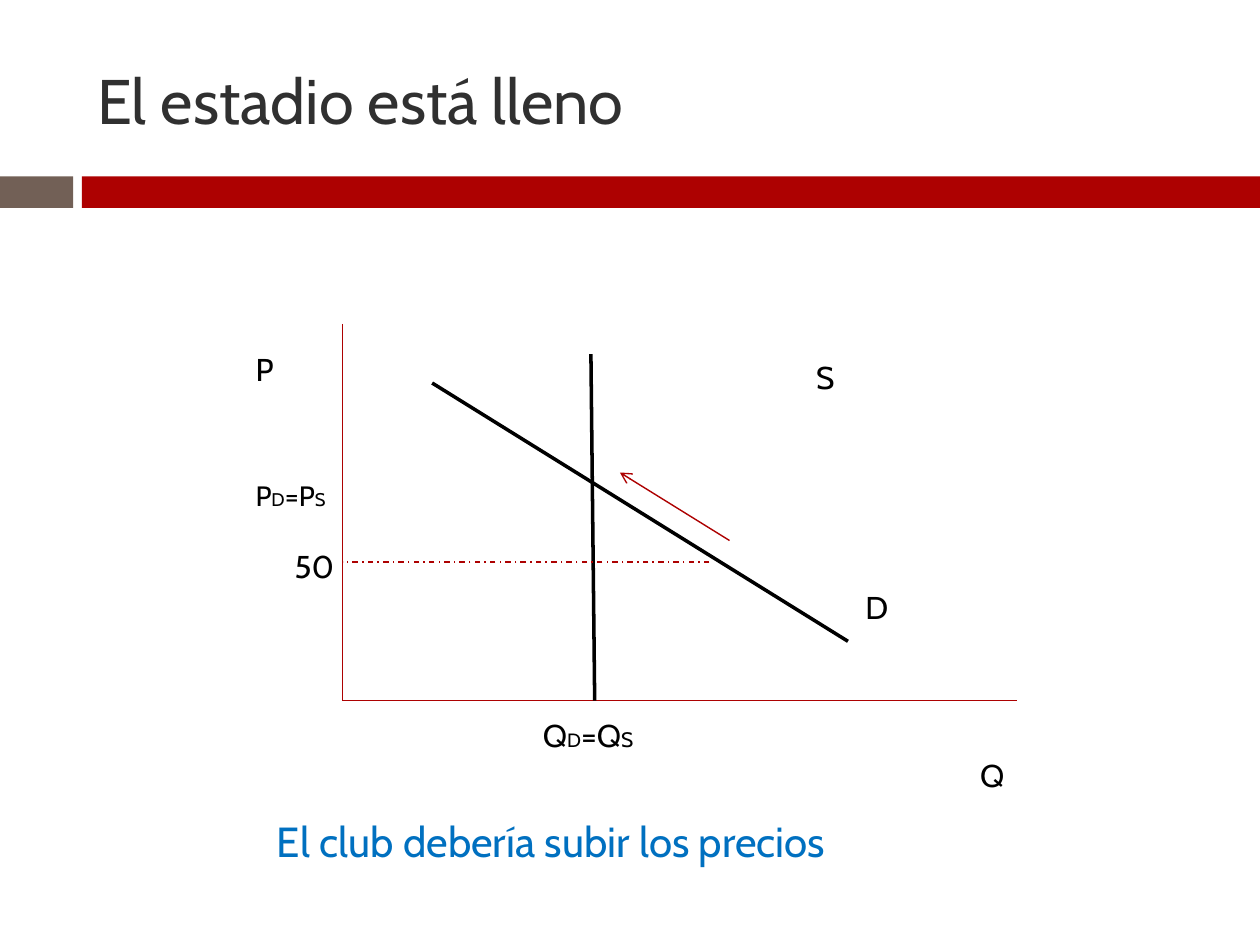
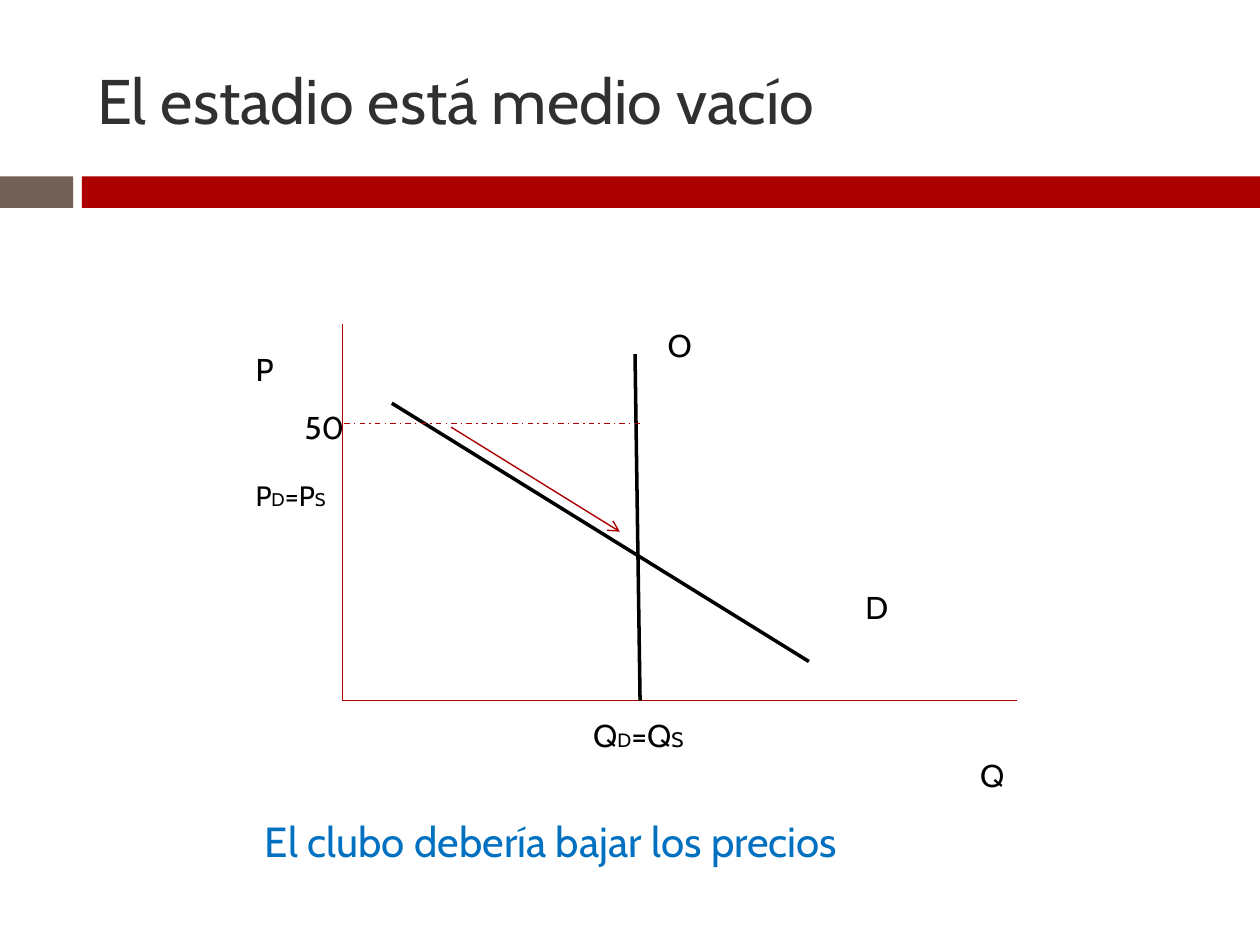
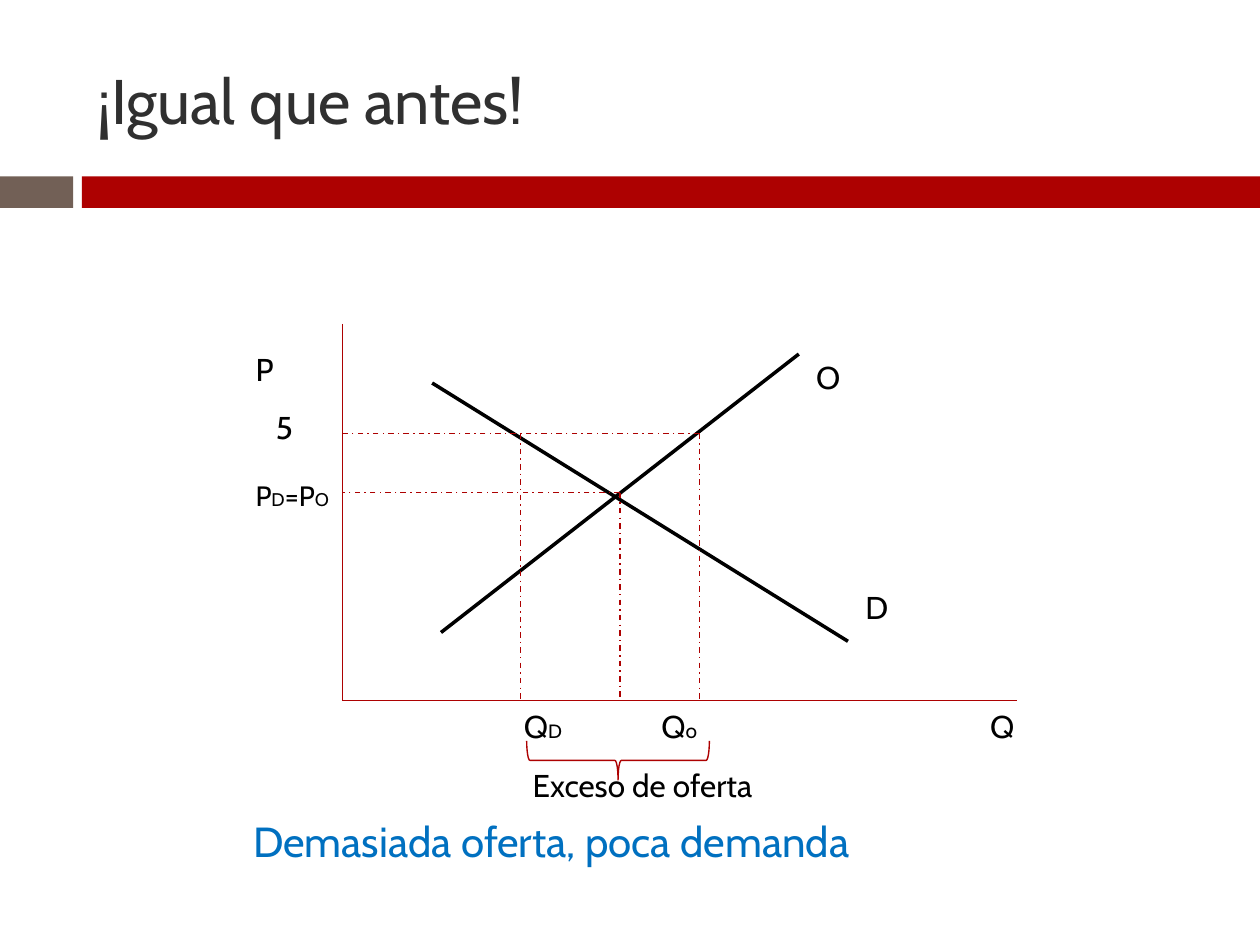
from dataclasses import dataclass

from lxml.etree import SubElement
from pptx import Presentation
from pptx.dml.color import RGBColor
from pptx.enum.dml import MSO_LINE
from pptx.enum.shapes import MSO_CONNECTOR, MSO_SHAPE
from pptx.enum.text import MSO_ANCHOR, MSO_AUTO_SIZE, PP_ALIGN
from pptx.oxml.ns import qn
from pptx.util import Emu, Pt

SCALE = 9144  # EMU in one px, at 100 px to the inch
AXIS_X, AXIS_Y = 272, 556  # where the two axes meet


@dataclass(frozen=True)
class Theme:
    font: str = "Cabin"
    title_color: str = "303030"
    text_color: str = "000000"
    caption_color: str = "0070C0"
    accent: str = "AD0101"
    stone: str = "726056"
    title_size: float = 36
    caption_size: float = 24
    label_size: float = 18
    price_sizes: tuple = (16, 10.5, 16, 10.5)
    quantity_sizes: tuple = (18, 11, 18, 12)
    thin: float = 0.79
    thick: float = 2


def px(length):
    return Emu(length * SCALE)


def rgb(color):
    return RGBColor.from_string(color)


def write_text(frame, text, *, font, sizes, color, align=PP_ALIGN.LEFT, tab=None):
    """Write one paragraph; "|" parts the text into spans, one size each."""
    para = frame.paragraphs[0]
    para.alignment = align
    if tab:
        tabs = SubElement(para._p.get_or_add_pPr(), qn("a:tabLst"))
        SubElement(tabs, qn("a:tab"), pos=str(px(tab)), algn="l")
    for words, size in zip(text.split("|"), sizes):
        span = para.add_run()
        span.text = words
        span.font.name = font
        span.font.size = Pt(size)
        span.font.color.rgb = rgb(color)


class SlideBuilder:
    def __init__(self, deck, theme):
        self.deck = deck
        self.theme = theme
        self.page = None

    # Page frame
    def start(self, title):
        self.page = self.deck.slides.add_slide(self.deck.slide_layouts[5])
        self.band(0, 58, self.theme.stone)
        self.band(65, 935, self.theme.accent)
        box = self.page.shapes.title
        box.left, box.top, box.width, box.height = map(px, (67, 25, 892, 108))
        box.text_frame.vertical_anchor = MSO_ANCHOR.MIDDLE
        box.text_frame.auto_size = MSO_AUTO_SIZE.NONE
        write_text(box.text_frame, title, font=self.theme.font,
                   sizes=(self.theme.title_size,), color=self.theme.title_color)

    def band(self, left, width, color):
        bar = self.page.shapes.add_shape(
            MSO_SHAPE.RECTANGLE, px(left), px(140), px(width), px(25))
        bar.shadow.inherit = False
        bar.fill.solid()
        bar.fill.fore_color.rgb = rgb(color)
        bar.line.fill.background()

    # Text
    def label(self, text, left, top, width, *, height=40, sizes=None, color=None,
              wrap=True, **layout):
        box = self.page.shapes.add_textbox(px(left), px(top), px(width), px(height))
        box.text_frame.word_wrap = wrap
        box.text_frame.auto_size = MSO_AUTO_SIZE.SHAPE_TO_FIT_TEXT
        write_text(box.text_frame, text, font=self.theme.font,
                   sizes=sizes or (self.theme.label_size,),
                   color=color or self.theme.text_color, **layout)

    def caption(self, text):
        self.label(text, 91, 642, 693, height=50, sizes=(self.theme.caption_size,),
                   color=self.theme.caption_color, align=PP_ALIGN.CENTER)

    def price(self, text):
        self.label(text, 193, 375, 87, height=37, sizes=self.theme.price_sizes)

    def quantity(self, text, left, top=563, width=110, **layout):
        self.label(text, left, top, width, sizes=self.theme.quantity_sizes, **layout)

    # Lines
    def line(self, start, end, *, color=None, width=None, dashed=False, arrow=False):
        line = self.page.shapes.add_connector(
            MSO_CONNECTOR.STRAIGHT, *map(px, start + end))
        line.line.color.rgb = rgb(color or self.theme.accent)
        line.line.width = Pt(width or self.theme.thin)
        if dashed:
            line.line.dash_style = MSO_LINE.DASH_DOT
        if arrow:
            SubElement(line.line._get_or_add_ln(), qn("a:tailEnd"), type="arrow")
        SubElement(line._element.spPr, qn("a:effectLst"))

    def curve(self, start, end):
        self.line(start, end, color=self.theme.text_color, width=self.theme.thick)

    def price_guide(self, x, y):
        self.line((x, y), (AXIS_X, y), dashed=True)

    def quantity_guide(self, x, y):
        self.line((x, y), (x, AXIS_Y), dashed=True)

    def brace(self, left, top, width, height):
        brace = self.page.shapes.add_shape(
            MSO_SHAPE.RIGHT_BRACE, px(left), px(top), px(width), px(height))
        brace.rotation = 90
        brace.shadow.inherit = False
        brace.fill.background()
        brace.line.color.rgb = rgb(self.theme.accent)
        brace.line.width = Pt(self.theme.thin)

    # Market diagram: axes, demand and supply with their names
    def market(self, *, demand, supply, supply_name, supply_at, quantity_at=(768, 595)):
        self.line((AXIS_X, 257), (AXIS_X, AXIS_Y))
        self.line((AXIS_X, AXIS_Y), (807, AXIS_Y))
        self.curve(*demand)
        self.curve(*supply)
        self.label("P", 193, 273, 79)
        self.label("Q", *quantity_at, 110)
        self.label("D", 677, 462, 35, wrap=False)
        self.label(supply_name, *supply_at, 40, wrap=False)


def full_stadium(slide):
    slide.start("El estadio está lleno")
    slide.market(demand=((343, 304), (673, 509)), supply=((472, 556), (469, 281)),
                 supply_name="S", supply_at=(638, 279))
    slide.price_guide(563, 446)
    slide.price("P|D|=P|S")
    slide.quantity("Q|D|=Q|S", 421)
    slide.label("50", 224, 429, 55)
    slide.line((579, 429), (492, 375), arrow=True)
    slide.caption("El club debería subir los precios")


def half_empty_stadium(slide):
    slide.start("El estadio está medio vacío")
    slide.market(demand=((311, 320), (642, 525)), supply=((508, 556), (504, 281)),
                 supply_name="O", supply_at=(520, 254))
    slide.price_guide(508, 336)
    slide.price("P|D|=P|S")
    slide.quantity("Q|D|=Q|S", 461)
    slide.label("50", 232, 319, 55)
    slide.line((358, 339), (492, 422), arrow=True)
    slide.caption("El clubo debería bajar los precios")


def excess_supply(slide):
    slide.start("¡Igual que antes!")
    slide.market(demand=((343, 304), (673, 509)), supply=((350, 502), (634, 281)),
                 supply_name="O", supply_at=(638, 279), quantity_at=(776, 556))
    slide.price_guide(492, 391)
    slide.price_guide(555, 344)
    for x, y in ((492, 391), (555, 344), (413, 344)):
        slide.quantity_guide(x, y)
    slide.price("P|D|=P|O")
    slide.quantity("Q|D\t|Q|o", 406, top=556, width=189, tab=109)
    slide.brace(475, 531, 31, 145)
    slide.label("Exceso de oferta", 413, 603, 197)
    slide.label("5", 209, 319, 79)
    slide.caption("Demasiada oferta, poca demanda")


def main():
    deck = Presentation()
    deck.slide_width, deck.slide_height = px(1000), px(750)
    slide = SlideBuilder(deck, Theme())
    for build in (full_stadium, half_empty_stadium, excess_supply):
        build(slide)
    deck.save("out.pptx")


if __name__ == "__main__":
    main()
